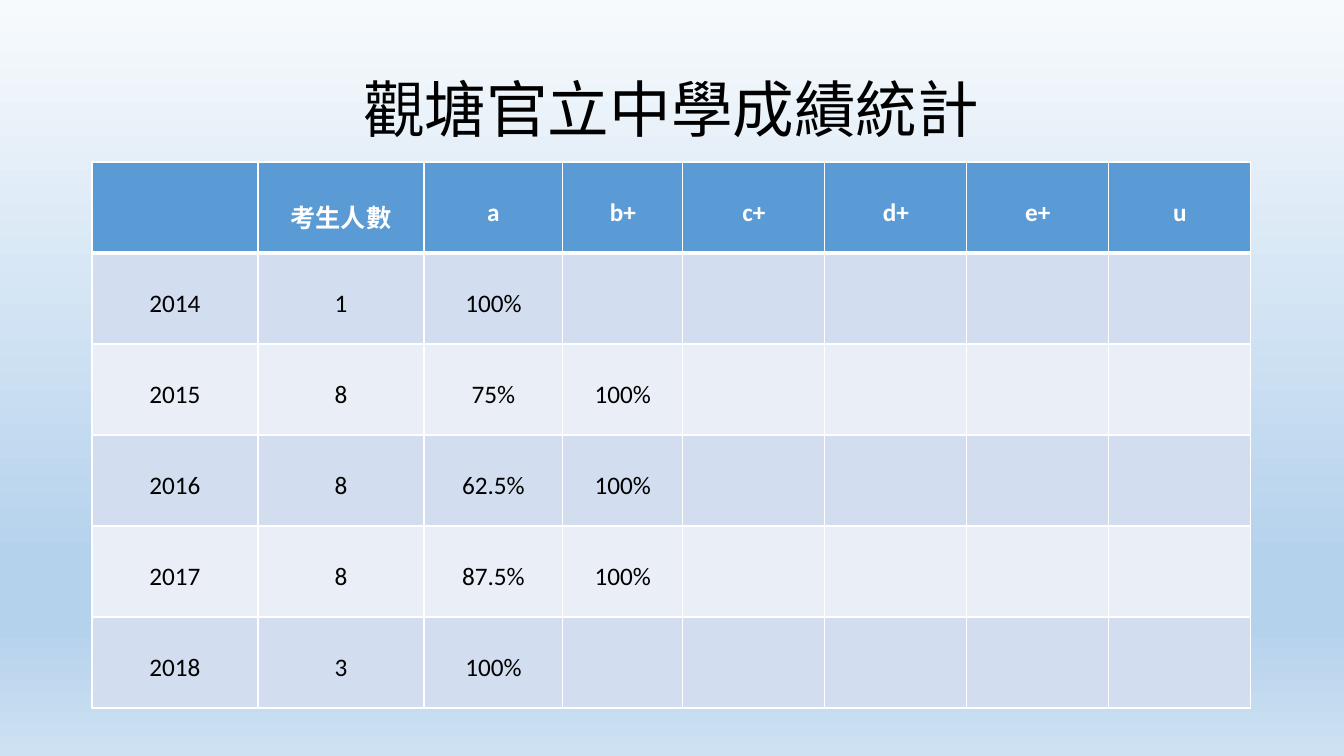
import lxml.etree
import pptx
import pptx.dml.color
import pptx.enum.text
import pptx.oxml.ns
import pptx.util

SCALE = 12192000 / 1344  # EMU per px
FONT = "Calibri"
COLORS = {
    "text": "000000",
    "white": "FFFFFF",
    "header": "5B9BD5",
    "odd": "D2DEEF",
    "even": "EAEFF7",
}
BACKGROUND = [(0, "F7FAFD"), (74, "B5D2EC"), (83, "B5D2EC"), (100, "CEE1F2")]
COLUMNS = [166, 166, 139, 120, 142, 142, 142, 142]
ROW_HEIGHT = 91
RESULTS = [
    ["", "考生人數", "a", "b+", "c+", "d+", "e+", "u"],
    ["2014", "1", "100%"],
    ["2015", "8", "75%", "100%"],
    ["2016", "8", "62.5%", "100%"],
    ["2017", "8", "87.5%", "100%"],
    ["2018", "3", "100%"],
]


def px(n):
    return pptx.util.Emu(round(n * SCALE))


def rgb(name):
    return pptx.dml.color.RGBColor.from_string(COLORS[name])


def add_xml(parent, tag, **attrs):
    return lxml.etree.SubElement(parent, pptx.oxml.ns.qn(tag), attrs)


def write(tf, text, size=18, color="text", bold=False, spacing=None):
    p = tf.paragraphs[0]
    p.alignment = pptx.enum.text.PP_ALIGN.CENTER
    p.line_spacing = spacing
    p.font.size = pptx.util.Pt(size)
    if text:
        r = p.add_run()
        r.text = text
        r.font.name = FONT
        r.font.size = pptx.util.Pt(size)
        r.font.bold = bold
        r.font.color.rgb = rgb(color)


class Deck:
    def __init__(self):
        self.prs = pptx.Presentation()
        self.prs.slide_width, self.prs.slide_height = px(1344), px(756)
        self.s = self.prs.slides.add_slide(self.prs.slide_layouts[5])

    def background(self, stops):
        fill = self.s.background.fill
        fill.gradient()
        fill.gradient_angle = 270
        gs_list = next(self.s.element.iter(pptx.oxml.ns.qn("a:gsLst")))
        for gs in list(gs_list):
            gs_list.remove(gs)
        for pos, color in stops:
            gs = add_xml(gs_list, "a:gs", pos=str(pos * 1000))
            add_xml(gs, "a:srgbClr", val=color)

    def title(self, text, x, y, w, h):
        sp = self.s.shapes.title
        sp.left, sp.top, sp.width, sp.height = px(x), px(y), px(w), px(h)
        tf = sp.text_frame
        tf.word_wrap = True
        tf.auto_size = pptx.enum.text.MSO_AUTO_SIZE.NONE
        tf.vertical_anchor = pptx.enum.text.MSO_ANCHOR.MIDDLE
        write(tf, text, size=44, spacing=0.9)

    def borders(self, cell, **widths):
        """Draw white cell borders; widths in points by side L, R, T, B."""
        tc_pr = cell._tc.get_or_add_tcPr()
        for side, width in widths.items():
            ln = add_xml(tc_pr, f"a:ln{side}", w=str(pptx.util.Pt(width)))
            add_xml(add_xml(ln, "a:solidFill"), "a:srgbClr", val=COLORS["white"])

    def table(self, rows, x, y, columns, row_height):
        frame = self.s.shapes.add_table(
            len(rows), len(columns), px(x), px(y),
            px(sum(columns)), px(row_height * len(rows)))
        table = frame.table
        for column, width in zip(table.columns, columns):
            column.width = px(width)
        for i, values in enumerate(rows):
            table.rows[i].height = px(row_height)
            header = i == 0
            fill = "header" if header else "odd" if i % 2 else "even"
            for j in range(len(columns)):
                cell = table.cell(i, j)
                cell.margin_top = px(36)
                self.borders(cell, L=1, R=1, T=3 if i == 1 else 1, B=3 if header else 1)
                cell.fill.solid()
                cell.fill.fore_color.rgb = rgb(fill)
                write(cell.text_frame, values[j] if j < len(values) else "",
                      color="white" if header else "text", bold=header)


def main():
    deck = Deck()
    deck.background(BACKGROUND)
    deck.title("觀塘官立中學成績統計", 92, 40, 1159, 146)
    deck.table(RESULTS, 92, 162, COLUMNS, ROW_HEIGHT)
    deck.prs.save("out.pptx")


if __name__ == "__main__":
    main()
